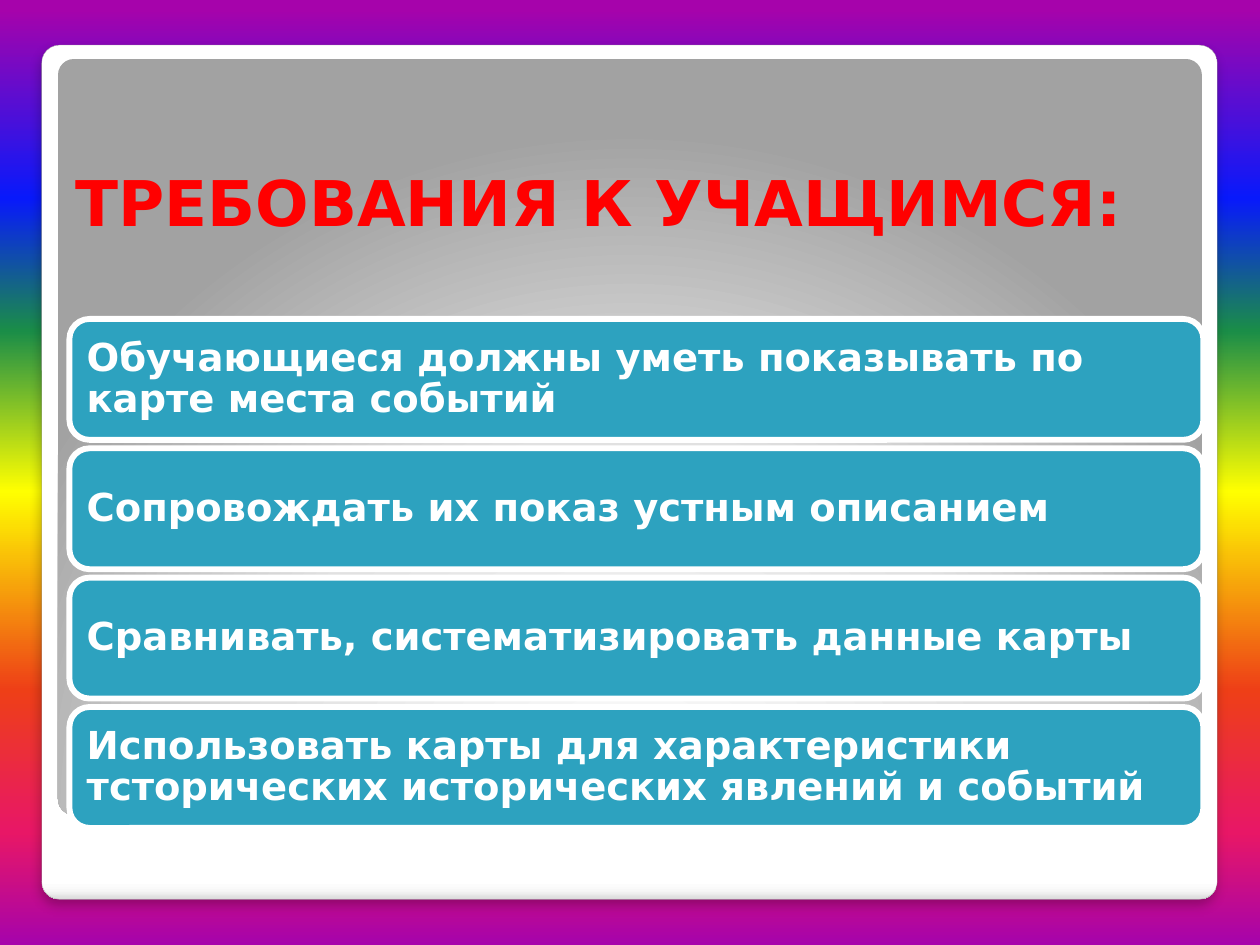
from lxml.etree import SubElement
from pptx import Presentation
from pptx.dml.color import RGBColor
from pptx.enum.shapes import MSO_SHAPE as Preset
from pptx.enum.text import MSO_ANCHOR as Anchor, PP_ALIGN as Align
from pptx.oxml.ns import qn
from pptx.util import Cm, Pt

COLORS = {
    "white": "FFFFFF", "card": "2DA2BF", "title": "FF0000",
    "frame_line": "A4A4A4", "shadow": "000000",
}
RAINBOW = [(1, "A603AB"), (21, "0819FB"), (35, "1A8D48"), (52, "FFFF00"),
           (73, "EE3F17"), (88, "E81766"), (100, "A603AB")]
FRAME_STOPS = [(0, "FFFFFF"), (98, "FFFFFF"), (99, "F7F7F7"), (100, "DADADA")]
PANEL_STOPS = [(0, "FFFFFF"), (55, "E1E1E1"), (100, "A2A2A2")]
PANEL_FOCUS = {"l": 50, "t": 175, "r": 50, "b": -75}
FONT = "DejaVu Sans"
REQUIREMENTS = [
    "Обучающиеся должны уметь показывать по карте места событий",
    "Сопровождать их показ устным описанием",
    "Сравнивать, систематизировать данные карты",
    "Использовать карты для характеристики тсторических исторических явлений и событий",
]


def color(name):
    return RGBColor.from_string(COLORS[name])


def set_gradient(owner, fill, stops, focus=None):
    fill.gradient()
    gradient = owner.find(".//" + qn("a:gradFill"))
    gradient.clear()
    stop_list = SubElement(gradient, qn("a:gsLst"))
    for position, value in stops:
        stop = SubElement(stop_list, qn("a:gs"), pos=str(position * 1000))
        SubElement(stop, qn("a:srgbClr"), val=value)
    if focus:
        circle = SubElement(gradient, qn("a:path"), path="circle")
        sides = {side: str(share * 1000) for side, share in focus.items()}
        SubElement(circle, qn("a:fillToRect"), **sides)
    else:
        SubElement(gradient, qn("a:lin"), ang="5400000", scaled="0")


def add_rounded(slide, box, radius):
    rounded = slide.shapes.add_shape(Preset.ROUNDED_RECTANGLE, *map(Cm, box))
    rounded.adjustments[0] = radius
    rounded.shadow.inherit = False
    return rounded


def add_bold_run(paragraph, text, size, color_name):
    run = paragraph.add_run()
    run.text = text
    run.font.name = FONT
    run.font.size = Pt(size)
    run.font.bold = True
    run.font.color.rgb = color(color_name)


def add_frame(slide, box):
    left, top, width, height = box
    frame = add_rounded(slide, box, 0.021)
    set_gradient(frame._element, frame.fill, FRAME_STOPS)
    frame.line.color.rgb = color("frame_line")
    frame.line.width = Pt(0.16)
    effects = frame._element.spPr.find(qn("a:effectLst"))
    shadow = SubElement(effects, qn("a:outerShdw"), blurRad=str(Pt(6)),
                        dist=str(Pt(4)), dir="5400000", rotWithShape="0")
    shade = SubElement(shadow, qn("a:srgbClr"), val=COLORS["shadow"])
    SubElement(shade, qn("a:alpha"), val="25000")

    panel = add_rounded(slide, (left + 0.33, top + 0.28, width - 0.64, height - 1.98), 0.021)
    set_gradient(panel._element, panel.fill, PANEL_STOPS, PANEL_FOCUS)
    panel.line.fill.background()


def add_title(slide, box):
    title = slide.shapes.add_textbox(*map(Cm, box)).text_frame
    title.word_wrap = True
    title.vertical_anchor = Anchor.BOTTOM
    add_bold_run(title.paragraphs[0], "ТРЕБОВАНИЯ К УЧАЩИМСЯ:", 36, "title")


def add_requirements(slide, box, gap=0.17):
    left, top, width, height = box
    count = len(REQUIREMENTS)
    card_height = (height - gap * (count - 1)) / count
    for index, requirement in enumerate(REQUIREMENTS):
        card_top = top + index * (card_height + gap)
        card = add_rounded(slide, (left, card_top, width, card_height), 0.1667)
        card.fill.solid()
        card.fill.fore_color.rgb = color("card")
        card.line.color.rgb = color("white")
        card.line.width = Pt(3.35)
        body = card.text_frame
        body.word_wrap = True
        body.vertical_anchor = Anchor.MIDDLE
        body.margin_left = body.margin_right = Cm(0.23)
        body.margin_top = body.margin_bottom = Cm(0.23)
        paragraph = body.paragraphs[0]
        paragraph.alignment = Align.LEFT
        paragraph.line_spacing = 0.9
        add_bold_run(paragraph, requirement, 22, "white")


def main():
    deck = Presentation()
    deck.slide_width, deck.slide_height = Cm(25.4), Cm(19.05)
    slide = deck.slides.add_slide(deck.slide_layouts[6])
    set_gradient(slide.background._cSld, slide.background.fill, RAINBOW)
    add_frame(slide, (0.84, 0.91, 23.7, 17.22))
    add_title(slide, (1.27, 1.57, 22.86, 3.38))
    add_requirements(slide, (1.4, 6.43, 22.86, 10.26))
    deck.save("out.pptx")


if __name__ == "__main__":
    main()
